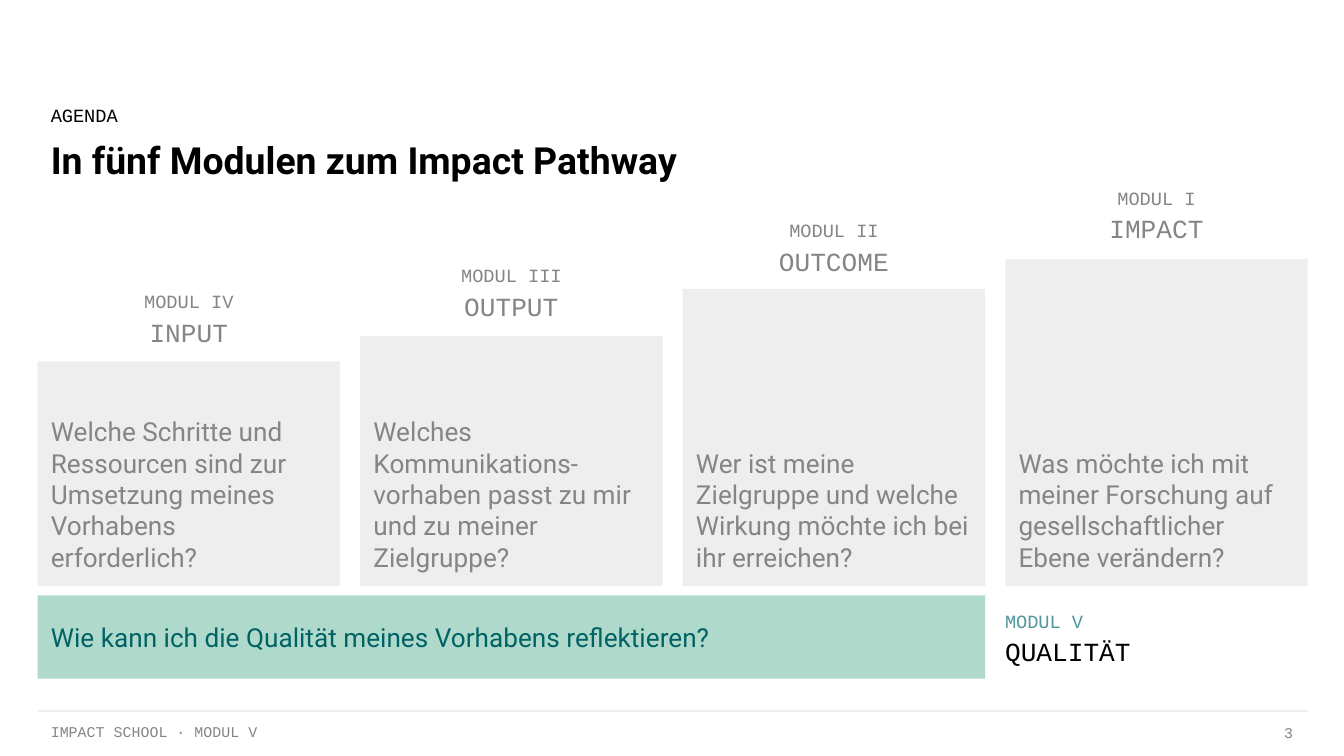
import pptx
import pptx.dml.color
import pptx.enum.shapes
import pptx.enum.text
import pptx.oxml
import pptx.oxml.ns
import pptx.util

Inches = pptx.util.Inches
ALIGN = pptx.enum.text.PP_ALIGN
ANCHOR = pptx.enum.text.MSO_ANCHOR

COLORS = {
    "ink": "000000",
    "paper": "FFFFFF",
    "muted": "858585",
    "panel": "EEEEEE",
    "mint": "AFDACB",
    "petrol": "006265",
    "teal": "4F969F",
}
SANS, MONO = "Roboto", "Courier New"

LEFT, RIGHT = 0.28, 9.73
COLUMN_WIDTH, COLUMN_GAP = 2.25, 0.15
COLUMN_BOTTOM = 4.36
LABEL_HEIGHT, LABEL_STEP = 0.28, 0.23

# Module, stage, question lines, top of the panel, top and width of the labels
STAGES = [
    ("MODUL IV", "INPUT",
     ["Welche Schritte und Ressourcen sind zur Umsetzung meines Vorhabens erforderlich?"],
     2.69, 2.1, 1.65),
    ("MODUL III", "OUTPUT",
     ["Welches Kommunikations-", "vorhaben passt zu mir und zu meiner Zielgruppe?"],
     2.5, 1.91, 1.65),
    ("MODUL II", "OUTCOME",
     ["Wer ist meine Zielgruppe und welche Wirkung möchte ich bei ihr erreichen?"],
     2.15, 1.57, 1.44),
    ("MODUL I", "IMPACT",
     ["Was möchte ich mit meiner Forschung auf gesellschaftlicher Ebene verändern?"],
     1.93, 1.33, 1.77),
]


def rgb(name):
    return pptx.dml.color.RGBColor.from_string(COLORS[name])


def write(shape, lines, size, font, color, align=ALIGN.LEFT, anchor=ANCHOR.MIDDLE, bold=False):
    """Fill a shape with one paragraph, its lines parted by line breaks."""
    frame = shape.text_frame
    frame.word_wrap = True
    frame.vertical_anchor = anchor
    frame.margin_left = frame.margin_right = Inches(0.1)
    frame.margin_top = frame.margin_bottom = Inches(0.1)
    para = frame.paragraphs[0]
    para.alignment = align
    for index, line in enumerate(lines):
        if index:
            para.add_line_break()
        span = para.add_run()
        span.text = line
        span.font.size = pptx.util.Pt(size)
        span.font.name = font
        span.font.bold = bold
        span.font.color.rgb = rgb(color)
    return para


def add_text(page, left, top, width, height, text, size, font, color, **style):
    box = page.shapes.add_textbox(Inches(left), Inches(top), Inches(width), Inches(height))
    return write(box, [text], size, font, color, **style)


def add_panel(page, left, top, width, height, fill):
    panel = page.shapes.add_shape(
        pptx.enum.shapes.MSO_SHAPE.RECTANGLE,
        Inches(left), Inches(top), Inches(width), Inches(height))
    panel.shadow.inherit = False
    panel.fill.solid()
    panel.fill.fore_color.rgb = rgb(fill)
    panel.line.fill.background()
    return panel


def add_header(page, left, top, width):
    add_text(page, left, top, width, 0.2, "AGENDA", 10, MONO, "ink")
    add_text(page, left, top + 0.16, width, 0.52, "In fünf Modulen zum Impact Pathway",
             20, SANS, "ink", anchor=ANCHOR.TOP, bold=True)


def add_stage_panel(page, left, top, width, height, question):
    panel = add_panel(page, left, top, width, height, "panel")
    write(panel, question, 14, SANS, "muted", anchor=ANCHOR.BOTTOM)


def add_stage_labels(page, left, top, width, module, stage):
    for text, size, drop in ((module, 10, 0), (stage, 14, LABEL_STEP)):
        add_text(page, left, top + drop, width, LABEL_HEIGHT, text, size, MONO, "muted",
                 align=ALIGN.CENTER)


def add_quality_row(page, left, top, width, height):
    label_left = left + width + 0.05
    name = add_panel(page, label_left, top + 0.2, 1.22, 0.37, "paper")
    write(name, ["QUALITÄT"], 14, MONO, "ink", anchor=ANCHOR.TOP)
    bar = add_panel(page, left, top, width, height, "mint")
    para = write(bar, ["Wie kann ich die Qualität meines Vorhabens reflektieren?"],
                 14, SANS, "petrol")
    para.space_after = pptx.util.Pt(6)
    add_text(page, label_left, top + 0.05, 1, LABEL_HEIGHT, "MODUL V", 10, MONO, "teal")


def add_footer(page, left, top, right):
    add_text(page, left, top + 0.02, 6.3, 0.34, "IMPACT SCHOOL · MODUL V", 8, MONO, "muted",
             anchor=ANCHOR.TOP)
    number = add_text(page, right - 0.44, top, 0.43, 0.34, "3", 8, MONO, "muted",
                      align=ALIGN.RIGHT)
    number.line_spacing = 0.8
    rule = page.shapes.add_connector(
        pptx.enum.shapes.MSO_CONNECTOR.STRAIGHT,
        Inches(left), Inches(top), Inches(right), Inches(top))
    rule.line.color.rgb = rgb("panel")
    rule.line.width = pptx.util.Pt(0.75)
    properties = rule._element.find(pptx.oxml.ns.qn("p:spPr"))
    properties.append(pptx.oxml.parse_xml(
        "<a:effectLst %s/>" % pptx.oxml.ns.nsdecls("a")))


def main():
    deck = pptx.Presentation()
    deck.slide_width = Inches(10)
    deck.slide_height = deck.slide_width * 9 // 16
    page = deck.slides.add_slide(deck.slide_layouts[6])

    add_footer(page, LEFT, 5.29, RIGHT)
    for column, (module, stage, question, top, label_top, label_width) in enumerate(STAGES):
        left = LEFT + column * (COLUMN_WIDTH + COLUMN_GAP)
        add_stage_panel(page, left, top, COLUMN_WIDTH, COLUMN_BOTTOM - top, question)
        label_left = left + (COLUMN_WIDTH - label_width) / 2
        add_stage_labels(page, label_left, label_top, label_width, module, stage)
    add_quality_row(page, LEFT, 4.43, 3 * COLUMN_WIDTH + 2 * COLUMN_GAP, 0.62)
    add_header(page, LEFT, 0.76, 7.77)

    deck.save("out.pptx")


if __name__ == "__main__":
    main()
